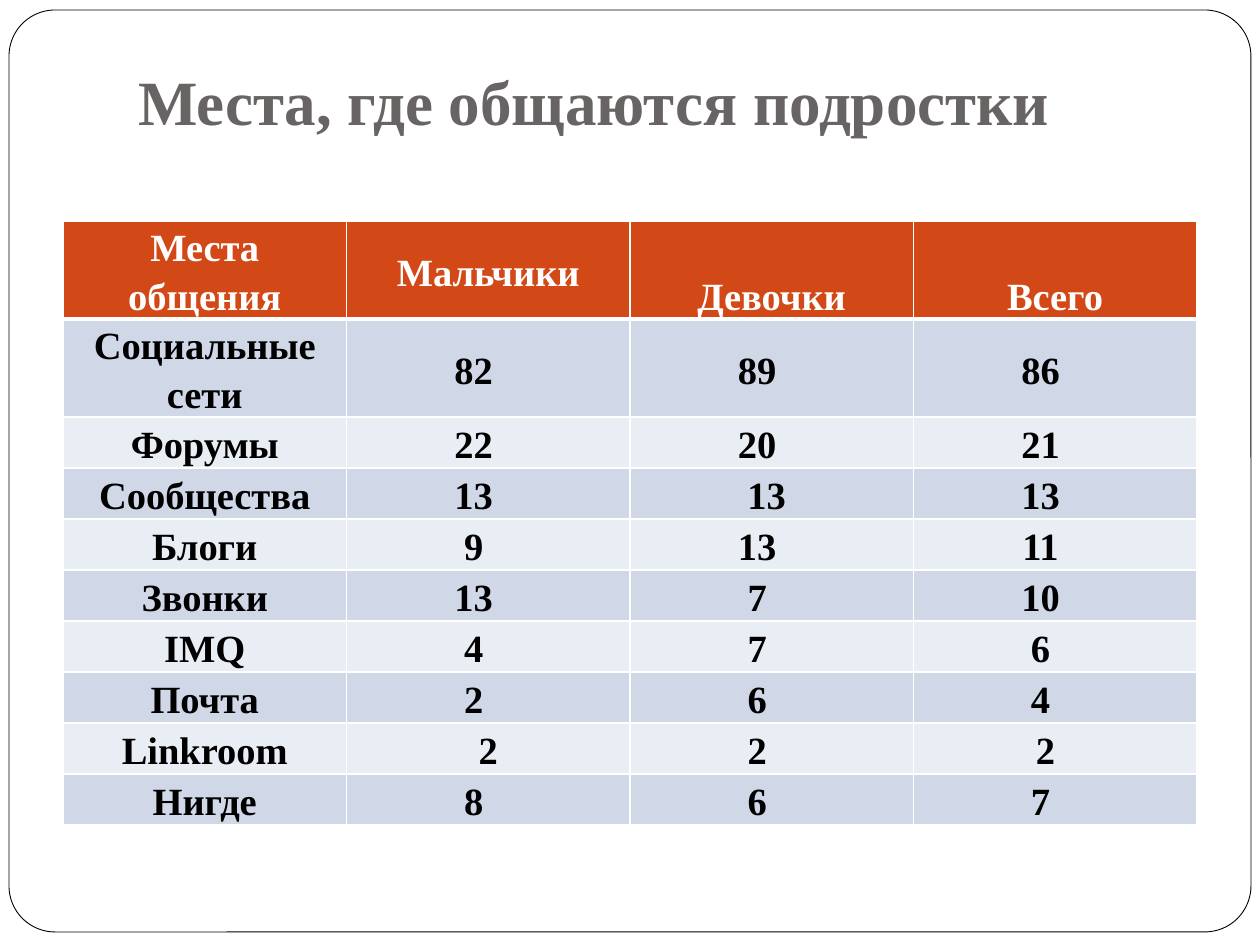
from dataclasses import dataclass

from lxml import etree
from pptx import Presentation
from pptx.dml.color import RGBColor
from pptx.enum.shapes import MSO_SHAPE
from pptx.enum.text import MSO_ANCHOR, PP_ALIGN
from pptx.oxml.ns import qn
from pptx.util import Pt

PX = 914400 // 126
TITLE_ONLY = 5
ROUNDED = MSO_SHAPE.ROUNDED_RECTANGLE
TOP, MIDDLE = MSO_ANCHOR.TOP, MSO_ANCHOR.MIDDLE
LEFT, CENTER = PP_ALIGN.LEFT, PP_ALIGN.CENTER


@dataclass(frozen=True)
class Theme:
    font: str = "Times New Roman"
    title_size: int = 36
    table_size: int = 22
    title: str = "696464"
    white: str = "FFFFFF"
    black: str = "000000"
    header: str = "D34817"
    bands: tuple = ("D0D8E8", "E9EDF4")


THEME = Theme()

TITLE = "Места, где общаются подростки"
HEADERS = ("Места общения", "Мальчики", "Девочки", "Всего")
PLACES = (
    ("Социальные сети", 82, 89, 86),
    ("Форумы", 22, 20, 21),
    ("Сообщества", 13, 13, 13),
    ("Блоги", 9, 13, 11),
    ("Звонки", 13, 7, 10),
    ("IMQ", 4, 7, 6),
    ("Почта", 2, 6, 4),
    ("Linkroom", 2, 2, 2),
    ("Нигде", 8, 6, 7),
)

TALL_ROW, ROW = 98, 51
CELL_INSET = 9
LOWERED_HEADERS = ("Девочки", "Всего")
HEADER_DROP = 49
# Values sit left of centre by a wider right inset, less in a few cells.
VALUE_INSET = 29
VALUE_INSET_AT = {("Сообщества", 2): 10, ("Linkroom", 1): 0, ("Linkroom", 3): 19}


def rgb(color):
    return RGBColor.from_string(color)


def px(*lengths):
    return [length * PX for length in lengths]


def write(frame, text, *, size, color, align=CENTER, spacing=1.0):
    paragraph = frame.paragraphs[0]
    paragraph.alignment = align
    paragraph.line_spacing = spacing
    run = paragraph.add_run()
    run.text = text
    run.font.name = THEME.font
    run.font.size = Pt(size)
    run.font.bold = True
    run.font.color.rgb = rgb(color)


def set_insets(target, left, top, right, bottom):
    (target.margin_left, target.margin_top,
     target.margin_right, target.margin_bottom) = px(left, top, right, bottom)


def set_borders(cell, top=1, bottom=1):
    """Draw white cell borders; widths are in points."""
    properties = cell._tc.get_or_add_tcPr()
    widths = {"a:lnL": 1, "a:lnR": 1, "a:lnT": top, "a:lnB": bottom}
    for position, (side, width) in enumerate(widths.items()):
        line = etree.Element(qn(side), w=str(Pt(width)))
        fill = etree.SubElement(line, qn("a:solidFill"))
        etree.SubElement(fill, qn("a:srgbClr"), val=THEME.white)
        properties.insert(position, line)


def add_frame(slide, left, top, width, height):
    frame = slide.shapes.add_shape(ROUNDED, *px(left, top, width, height))
    frame.adjustments[0] = 0.05
    frame.shadow.inherit = False
    frame.fill.solid()
    frame.fill.fore_color.rgb = rgb(THEME.white)
    frame.line.color.rgb = rgb(THEME.black)
    frame.line.width = Pt(0.5)
    slide.shapes.title._element.addprevious(frame._element)


def place_title(slide, left, top, width, height):
    title = slide.shapes.title
    title.left, title.top, title.width, title.height = px(left, top, width, height)
    frame = title.text_frame
    frame.word_wrap = True
    frame.vertical_anchor = TOP
    set_insets(frame, 12, 24, 12, 12)
    write(frame, TITLE, size=THEME.title_size, color=THEME.title, align=LEFT)


def fill_cell(cell, text, *, color, fill, drop=0, right=0, **borders):
    cell.vertical_anchor = MIDDLE
    set_insets(cell, CELL_INSET, drop, CELL_INSET + right, 0)
    cell.fill.solid()
    cell.fill.fore_color.rgb = rgb(fill)
    set_borders(cell, **borders)
    write(cell.text_frame, text, size=THEME.table_size, color=color, spacing=1.15)


def add_places_table(slide, left, top, width):
    heights = [TALL_ROW] * 2 + [ROW] * (len(PLACES) - 1)
    table = slide.shapes.add_table(
        len(heights), len(HEADERS), *px(left, top, width, sum(heights))).table
    for row, height in zip(table.rows, heights):
        row.height = height * PX
    for column in table.columns:
        column.width = width * PX // len(HEADERS)

    for col, header in enumerate(HEADERS):
        fill_cell(table.cell(0, col), header, color=THEME.white, fill=THEME.header,
                  drop=HEADER_DROP if header in LOWERED_HEADERS else 0, bottom=3)
    for index, place in enumerate(PLACES):
        for col, entry in enumerate(place):
            right = VALUE_INSET_AT.get((place[0], col), VALUE_INSET) if col else 0
            fill_cell(table.cell(index + 1, col), str(entry), color=THEME.black,
                      fill=THEME.bands[index % 2], right=right,
                      top=1 if index else 3)


def main():
    deck = Presentation()
    deck.slide_width, deck.slide_height = px(1260, 945)
    slide = deck.slides.add_slide(deck.slide_layouts[TITLE_ONLY])
    add_frame(slide, 9, 10, 1242, 922)
    place_title(slide, 126, 38, 1071, 256)
    add_places_table(slide, 63, 221, 1134)
    deck.save("out.pptx")


if __name__ == "__main__":
    main()
